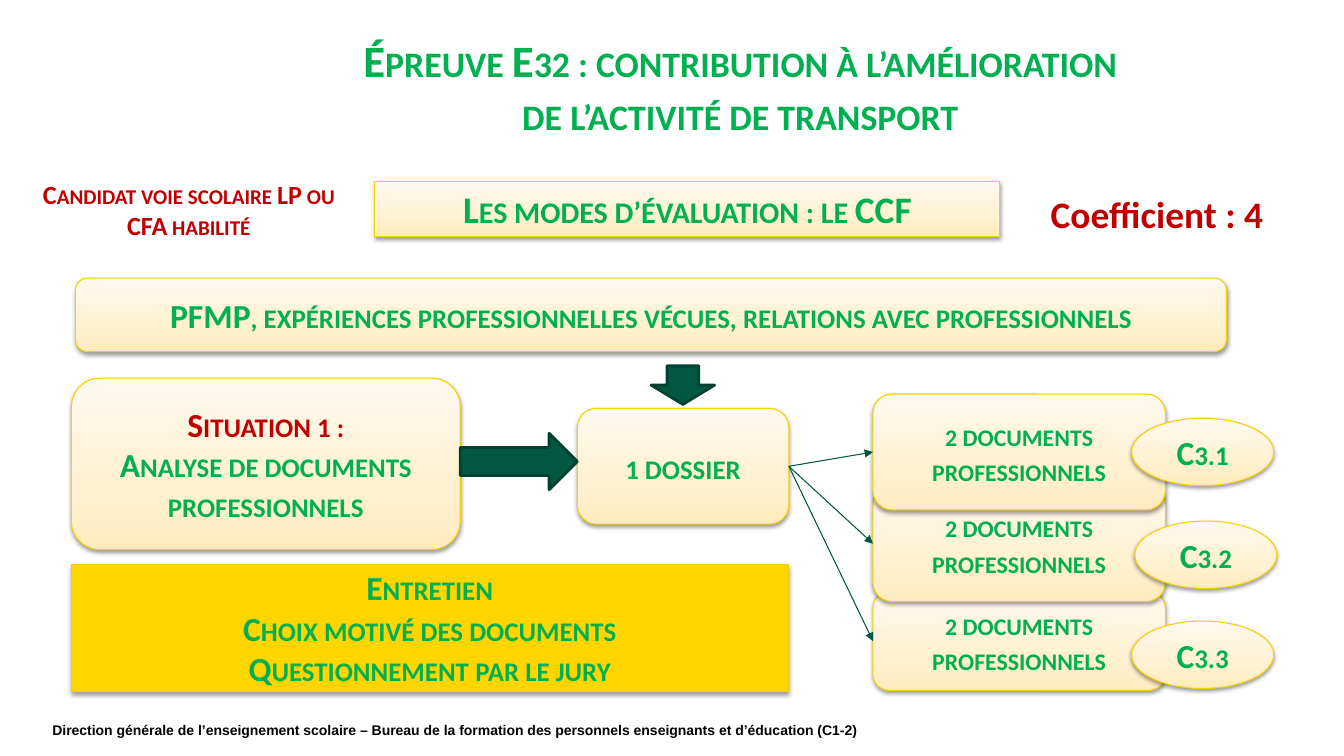
from pptx import Presentation
from pptx.dml.color import RGBColor
from pptx.enum.shapes import MSO_CONNECTOR, MSO_SHAPE
from pptx.enum.text import MSO_ANCHOR, PP_ALIGN
from pptx.oxml import parse_xml
from pptx.oxml.ns import nsdecls
from pptx.util import Cm, Pt

RECT, ROUND, OVAL = MSO_SHAPE.RECTANGLE, MSO_SHAPE.ROUNDED_RECTANGLE, MSO_SHAPE.OVAL
RIGHT, DOWN = MSO_SHAPE.RIGHT_ARROW, MSO_SHAPE.DOWN_ARROW
TOP, MIDDLE = MSO_ANCHOR.TOP, MSO_ANCHOR.MIDDLE
LEFT, CENTER = PP_ALIGN.LEFT, PP_ALIGN.CENTER
STRAIGHT = MSO_CONNECTOR.STRAIGHT

THEME = {
    "green": "00B050", "red": "C00000", "black": "000000",
    "gold": "FFD500", "edge": "F9D000",
    "arrow": "005841", "rim": "004130", "link": "005640",
    "fade": [(0, "FFEBBD"), (35, "FFF1D1"), (100, "FFF9EE")],
    "title": 32, "head": 26.7, "body": 24, "doc": 21.3, "side": 18.7, "foot": 10,
    "font": "Calibri", "plain": "Arial",
    "thin": 0.75, "thick": 2,
}

# Content: boxes are (left, top, width, height) in cm
TITLE = ["Épreuve E32 : contribution à l’amélioration", "de l’activité de transport"]
FOOT = ["Direction générale de l’enseignement scolaire – Bureau de la formation "
        "des personnels enseignants et d’éducation (C1-2)"]
LABELS = [
    ((3.86, 0.69, 29.59, 3), TITLE, {"size": "title"}),
    ((1.32, 17.73, 31.6, 1.32), FOOT,
     {"size": "foot", "tint": "black", "font": "plain", "caps": False,
      "align": LEFT, "anchor": MIDDLE, "inset": 0}),
    ((0.43, 4.37, 8.66, 1.85), ["Candidat voie scolaire LP ou CFA habilité"],
     {"size": "side", "tint": "red"}),
    ((24.84, 4.7, 8.64, 1.4), ["Coefficient : 4"],
     {"size": "head", "tint": "red", "caps": False}),
]
STAGE = (1.8, 9.53, 9.8, 4.32)
FILE = (14.55, 10.29, 5.33, 2.92)
PANELS = [
    (RECT, (9.45, 4.57, 15.75, 1.4), ["Les modes d’évaluation : le CCF"], "head", TOP),
    (ROUND, (1.9, 7.01, 29.01, 1.85),
     ["PFMP, expériences professionnelles vécues, relations avec professionnels"],
     "body", MIDDLE),
    (ROUND, STAGE, [("Situation 1 :", "red"), "Analyse de documents professionnels"],
     "body", MIDDLE),
    (ROUND, FILE, ["1 dossier"], "body", MIDDLE),
]
TALK_BOX = (1.8, 14.22, 18.06, 3.2)
TALK = ["Entretien", "Choix motivé des documents", "Questionnement par le jury"]
DOC = ["2 documents professionnels"]
DOC_X, DOC_W = 22, 7.37
DOCS = [(9.93, 2.92), (12.24, 2.92), (14.91, 2.49)]
SKILLS = [("C3.1", 28.52, 10.54), ("C3.2", 28.6, 13.13), ("C3.3", 28.52, 15.65)]
SKILL_W, SKILL_H = 3.58, 1.7
DOWN_BOX = (16.41, 9.22, 1.6, 0.97)
ARROW_Y, ARROW_H = 10.92, 1.42

deck = Presentation()
deck.slide_width, deck.slide_height = Cm(33.87), Cm(19.05)
shapes = deck.slides.add_slide(deck.slide_layouts[6]).shapes


def color(name):
    return RGBColor.from_string(THEME[name])


def write(shape, lines, size, tint="green", font="font", caps=True,
          align=CENTER, anchor=TOP, inset=None):
    frame = shape.text_frame
    form = {"word_wrap": True, "vertical_anchor": anchor}
    if inset is not None:
        form.update({f"margin_{side}": Cm(inset)
                     for side in ("left", "right", "top", "bottom")})
    for key, value in form.items():
        setattr(frame, key, value)
    for i, line in enumerate(lines):
        text, shade = line if isinstance(line, tuple) else (line, tint)
        para = frame.add_paragraph() if i else frame.paragraphs[0]
        para.alignment = align
        run = para.add_run()
        run.text = text
        style = {"name": THEME[font], "size": Pt(THEME[size]), "bold": True}
        for key, value in style.items():
            setattr(run.font, key, value)
        run.font.color.rgb = color(shade)
        if caps:
            run._r.get_or_add_rPr().set("cap", "small")


def outline(line, tint, width):
    line.color.rgb = color(tint)
    line.width = Pt(THEME[width])


def panel(kind, box, lines, size="body", anchor=MIDDLE, fill=None):
    shape = shapes.add_shape(kind, *map(Cm, box))
    props = shape._element.spPr
    if fill:
        shape.fill.solid()
        shape.fill.fore_color.rgb = color(fill)
    else:
        stops = "".join(f'<a:gs pos="{pos * 1000}"><a:srgbClr val="{tone}"/></a:gs>'
                        for pos, tone in THEME["fade"])
        props.insert(2, parse_xml(
            f'<a:gradFill {nsdecls("a")} rotWithShape="1"><a:gsLst>{stops}</a:gsLst>'
            '<a:lin ang="16200000" scaled="0"/></a:gradFill>'))
    outline(shape.line, "edge", "thin")
    shape.shadow.inherit = False
    props[-1].append(parse_xml(
        f'<a:outerShdw {nsdecls("a")} blurRad="40000" dist="20000" dir="5400000" '
        'rotWithShape="0"><a:srgbClr val="000000"><a:alpha val="38000"/>'
        '</a:srgbClr></a:outerShdw>'))
    write(shape, lines, size, anchor=anchor)


def arrow(kind, box):
    shape = shapes.add_shape(kind, *map(Cm, box))
    shape.shadow.inherit = False
    shape.fill.solid()
    shape.fill.fore_color.rgb = color("arrow")
    outline(shape.line, "rim", "thick")


def link(*ends):
    wire = shapes.add_connector(STRAIGHT, *map(Cm, ends))
    outline(wire.line, "link", "thin")
    wire.line._get_or_add_ln().append(
        parse_xml(f'<a:tailEnd {nsdecls("a")} type="triangle"/>'))
    wire._element.spPr.append(parse_xml(f'<a:effectLst {nsdecls("a")}/>'))


# Free text
for box, lines, style in LABELS:
    write(shapes.add_textbox(*map(Cm, box)), lines, **style)

# Main panels
for item in PANELS:
    panel(*item)
panel(RECT, TALK_BOX, TALK, fill="gold")

# Documents, the first one in front
for top, height in reversed(DOCS):
    panel(ROUND, (DOC_X, top, DOC_W, height), DOC, "doc")

# Skills
for name, left, top in SKILLS:
    panel(OVAL, (left, top, SKILL_W, SKILL_H), [name])

# Arrows and links
start = STAGE[0] + STAGE[2]
arrow(RIGHT, (start, ARROW_Y, FILE[0] - start, ARROW_H))
arrow(DOWN, DOWN_BOX)
for top, height in DOCS:
    link(FILE[0] + FILE[2], FILE[1] + FILE[3] / 2, DOC_X, top + height / 2)

deck.save("out.pptx")
